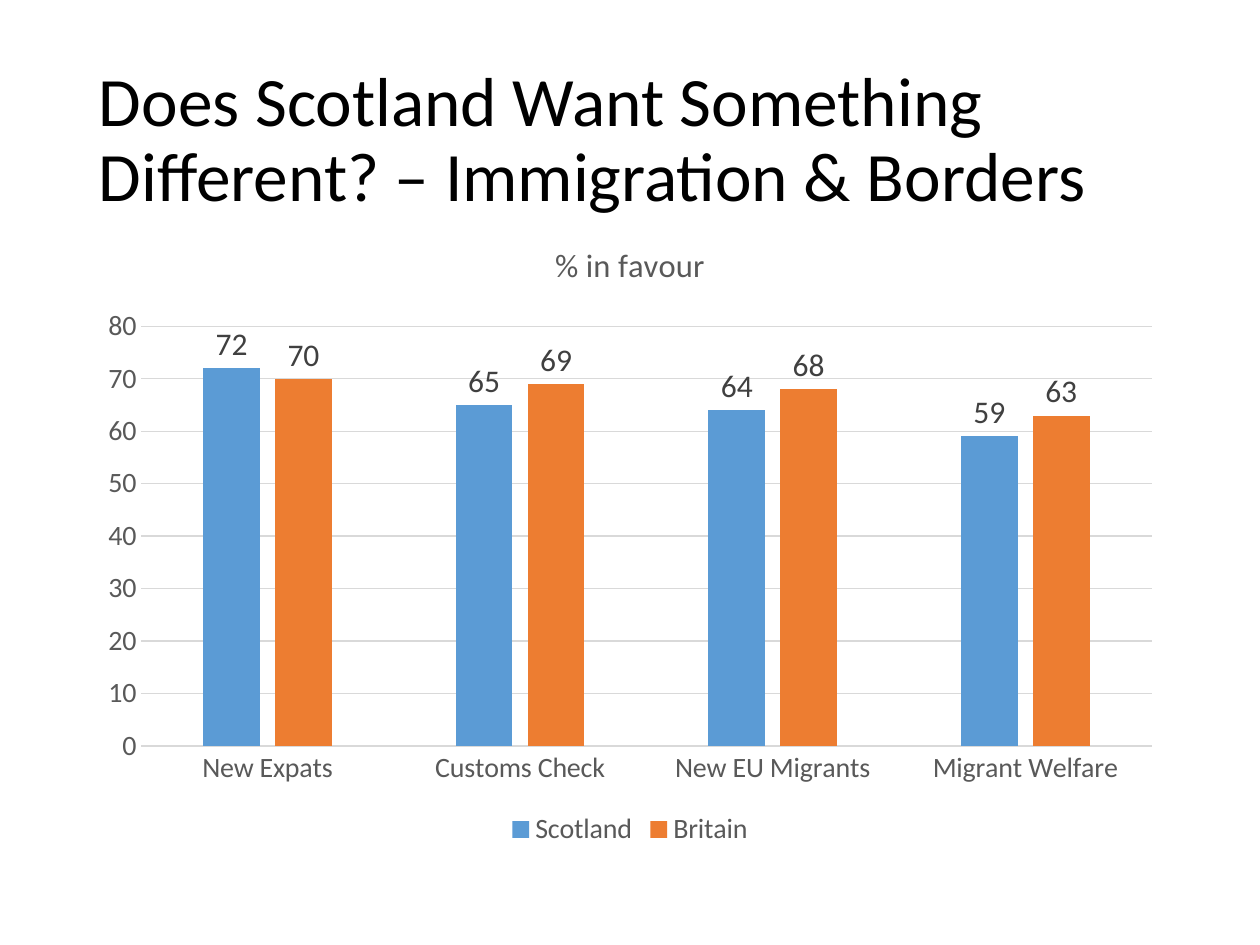
"""Build a slide comparing Scottish and British views on immigration and borders."""
from pptx import Presentation
from pptx.chart import data
from pptx.dml.color import RGBColor
from pptx.enum import chart as ch, text
from pptx.util import Pt

HEADING = "Does Scotland Want Something Different? – Immigration & Borders"
CHART_TITLE = "% in favour"
POLICIES = ["New Expats", "Customs Check", "New EU Migrants", "Migrant Welfare"]
BLACK = RGBColor(0, 0, 0)
DARK = RGBColor(0x40, 0x40, 0x40)
GREY = RGBColor(0x59, 0x59, 0x59)
RULE = RGBColor(0xD9, 0xD9, 0xD9)
NATIONS = [
    ("Scotland", (72, 65, 64, 59), RGBColor(0x5B, 0x9B, 0xD5)),
    ("Britain", (70, 69, 68, 63), RGBColor(0xED, 0x7D, 0x31)),
]
FONT = "Calibri"
LEFT, WIDTH = Pt(49.5), Pt(621)


def style(font, size, color):
    font.name, font.size, font.bold = FONT, Pt(size), False
    font.color.rgb = color


def rule(line):
    line.color.rgb, line.width = RULE, Pt(0.75)


def add_heading(slide):
    frame = slide.shapes.add_textbox(LEFT, Pt(28.75), WIDTH, Pt(104.4)).text_frame
    frame.word_wrap = True
    frame.vertical_anchor = text.MSO_ANCHOR.MIDDLE
    frame.text = HEADING
    paragraph = frame.paragraphs[0]
    paragraph.line_spacing = 0.9
    style(paragraph.runs[0].font, 39.6, BLACK)


def add_poll(slide):
    poll = data.CategoryChartData()
    poll.categories = POLICIES
    for name, shares, _ in NATIONS:
        poll.add_series(name, shares)
    chart = slide.shapes.add_chart(
        ch.XL_CHART_TYPE.COLUMN_CLUSTERED, LEFT, Pt(124), WIDTH, Pt(363), poll
    ).chart
    style(chart.font, 10, BLACK)

    chart.has_title = True
    chart.chart_title.include_in_layout = False
    title = chart.chart_title.text_frame
    title.text = CHART_TITLE
    style(title.paragraphs[0].runs[0].font, 18.6, GREY)

    chart.has_legend = True
    chart.legend.position = ch.XL_LEGEND_POSITION.BOTTOM
    chart.legend.include_in_layout = False
    style(chart.legend.font, 16, GREY)

    policies, shares = chart.category_axis, chart.value_axis
    for axis in (policies, shares):
        axis.major_tick_mark = axis.minor_tick_mark = ch.XL_TICK_MARK.NONE
        style(axis.tick_labels.font, 16, GREY)
    rule(policies.format.line)
    shares.format.line.fill.background()
    rule(shares.major_gridlines.format.line)
    shares.minimum_scale, shares.maximum_scale, shares.major_unit = 0, 80, 10

    plot = chart.plots[0]
    plot.gap_width, plot.overlap, plot.vary_by_categories = 219, -27, False
    for nation, (_, _, color) in zip(plot.series, NATIONS):
        nation.format.fill.solid()
        nation.format.fill.fore_color.rgb = color
        nation.invert_if_negative = False
        labels = nation.data_labels
        labels.show_value = True
        labels.position = ch.XL_LABEL_POSITION.OUTSIDE_END
        style(labels.font, 18, DARK)


def main():
    deck = Presentation()
    deck.slide_width, deck.slide_height = Pt(720), Pt(540)
    slide = deck.slides.add_slide(deck.slide_layouts[6])
    add_heading(slide)
    add_poll(slide)
    deck.save("out.pptx")


if __name__ == "__main__":
    main()
